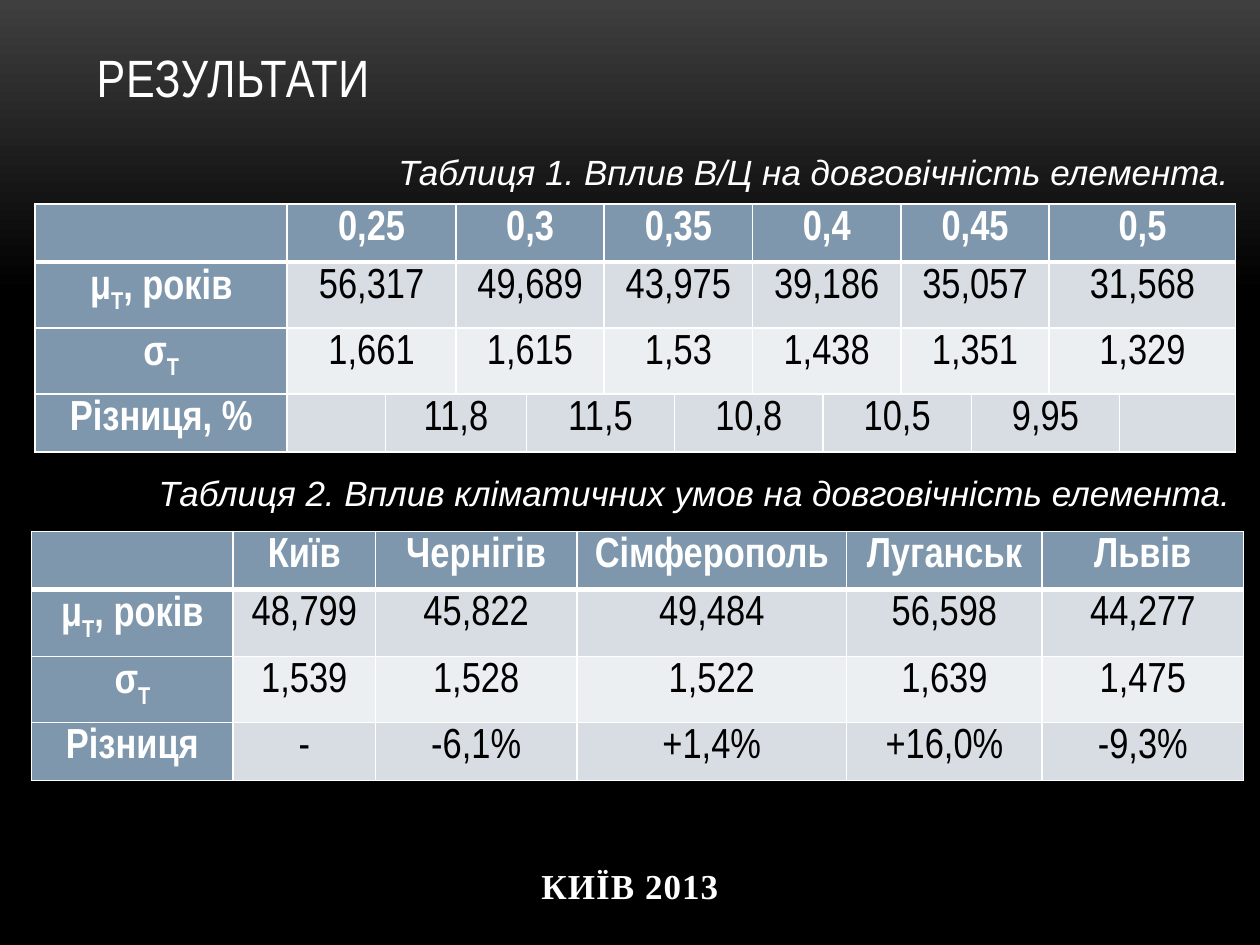
from lxml import etree
from pptx import Presentation
from pptx.dml.color import RGBColor
from pptx.enum.text import MSO_ANCHOR as Anchor, PP_ALIGN as Align
from pptx.oxml.ns import qn
from pptx.util import Cm, Pt


def color(value):
    return RGBColor.from_string(value)


def add_run(paragraph, text, hex_color, formats, **properties):
    run = paragraph.add_run()
    run.text = text
    run.font.color.rgb = color(hex_color)
    for name, value in formats.items():
        setattr(run.font, name, value)
    for name, value in properties.items():
        run._r.get_or_add_rPr().set(name, str(value))


WHITE, BLACK, STEEL = "FFFFFF", "000000", "7E97AD"
BANDS = ["D8DDE3", "ECEFF1"]

presentation = Presentation()
presentation.slide_width, presentation.slide_height = Cm(25.4), Cm(19.05)
slide = presentation.slides.add_slide(presentation.slide_layouts[6])

# Background fading from grey to black
background = slide.background.fill
background.gradient()
background.gradient_angle = 270
for stop, position, shade in zip(background.gradient_stops, (0, 0.31), ("3F3F3F", BLACK)):
    stop.position = position
    stop.color.rgb = color(shade)

# Title, table captions and footer
title_font = {"name": "Arial Narrow", "size": Pt(30)}
caption_font = {"name": "Arial", "size": Pt(20), "italic": True}
footer_font = {"name": "Times New Roman", "size": Pt(20), "bold": True}
texts = [
    ("РЕЗУЛЬТАТИ", (1.7, 0.76, 22.02, 1.55), title_font, Anchor.BOTTOM, Align.LEFT, 0, 50),
    ("Таблиця 1. Вплив В/Ц на довговічність елемента.",
     (6.53, 2.72, 18.87, 1.47), caption_font, Anchor.MIDDLE, Align.LEFT, 1.25, 0),
    ("Таблиця 2. Вплив кліматичних умов на довговічність елемента.",
     (1.7, 9.35, 23.7, 1.17), caption_font, Anchor.MIDDLE, Align.LEFT, 1.25, 0),
    ("КИЇВ 2013", (0, 16.87, 25.4, 1.98), footer_font, Anchor.MIDDLE, Align.CENTER, 0, 60),
]
for text, box, formats, anchor, alignment, indent, spacing in texts:
    shape = slide.shapes.add_textbox(*map(Cm, box))
    frame = shape.text_frame
    frame.word_wrap = True
    frame.vertical_anchor = anchor
    paragraph = frame.paragraphs[0]
    paragraph.alignment = alignment
    paragraph._p.get_or_add_pPr().set("indent", str(Cm(indent)))
    add_run(paragraph, text, formats[1] if 1 in formats else WHITE, formats, spc=spacing)

# Tables: every entry is (label or value, column span); odd label parts are subscripts
MEAN, DEVIATION = ("μ", "Т", ", років"), ("σ", "Т")


def paired(label, values):
    return [(label, 1)] + [(value, 2) for value in values.split()]


tables = [
    {
        "origin": (0.71, 4.11),
        "columns": [5.08, 1.98] + [1.42, 1.42] + [1.57, 1.42] * 4 + [2.34],
        "heights": [0.93, 1.07, 1.08, 0.92],
        "rows": [
            paired((), "0,25 0,3 0,35 0,4 0,45 0,5"),
            paired(MEAN, "56,317 49,689 43,975 39,186 35,057 31,568"),
            paired(DEVIATION, "1,661 1,615 1,53 1,438 1,351 1,329"),
            [(("Різниця, %",), 1), ("", 1)]
            + paired((), "11,8 11,5 10,8 10,5 9,95")[1:] + [("", 1)],
        ],
    },
    {
        "origin": (0.64, 10.71),
        "columns": [4.06, 2.87, 4.06, 5.44, 3.94, 4.06],
        "heights": [1.17, 1.35, 1.33, 1.17],
        "rows": [
            [(label, 1) for label in [(), "Київ", "Чернігів", "Сімферополь", "Луганськ", "Львів"]],
            [(label, 1) for label in [MEAN, "48,799", "45,822", "49,484", "56,598", "44,277"]],
            [(label, 1) for label in [DEVIATION, "1,539", "1,528", "1,522", "1,639", "1,475"]],
            [(label, 1) for label in [("Різниця",), "-", "-6,1%", "+1,4%", "+16,0%", "-9,3%"]],
        ],
    },
]
cell_margins = {"margin_left": Cm(0.18), "margin_right": Cm(0.18), "margin_top": 0, "margin_bottom": 0}

for data in tables:
    columns, heights = data["columns"], data["heights"]
    left, top = data["origin"]
    table = slide.shapes.add_table(len(heights), len(columns), Cm(left), Cm(top),
                                   Cm(sum(columns)), Cm(sum(heights))).table
    for column, width in zip(table.columns, columns):
        column.width = Cm(width)
    for row, height in zip(table.rows, heights):
        row.height = Cm(height)

    # Wording and merged cells
    for row_index, entries in enumerate(data["rows"]):
        column_index = 0
        for content, span in entries:
            cell = table.cell(row_index, column_index)
            if span > 1:
                cell.merge(table.cell(row_index, column_index + span - 1))
            heading = row_index == 0 or column_index == 0
            formats = {"name": "Arial Narrow", "size": Pt(24), "bold": heading}
            paragraph = cell.text_frame.paragraphs[0]
            paragraph.alignment = Align.CENTER
            paragraph.line_spacing = 1.15
            parts = (content,) if isinstance(content, str) else content
            for part_index, part in enumerate(parts):
                if part:
                    add_run(paragraph, part, WHITE if heading else BLACK, formats,
                            baseline=-25000 if part_index % 2 else 0)
            column_index += span

    # Fills, margins and white borders, thicker below the header
    for row_index in range(len(heights)):
        for column_index in range(len(columns)):
            cell = table.cell(row_index, column_index)
            for name, value in cell_margins.items():
                setattr(cell, name, value)
            heading = row_index == 0 or column_index == 0
            cell.fill.solid()
            cell.fill.fore_color.rgb = color(STEEL if heading else BANDS[(row_index - 1) % 2])
            properties = cell._tc.get_or_add_tcPr()
            for order, side in enumerate(("lnL", "lnR", "lnT", "lnB")):
                thick = (row_index, side) in ((0, "lnB"), (1, "lnT"))
                line = etree.Element(qn(f"a:{side}"), w=str(Pt(3 if thick else 1)))
                solid = etree.SubElement(line, qn("a:solidFill"))
                etree.SubElement(solid, qn("a:srgbClr"), val=WHITE)
                properties.insert(order, line)

presentation.save("out.pptx")
